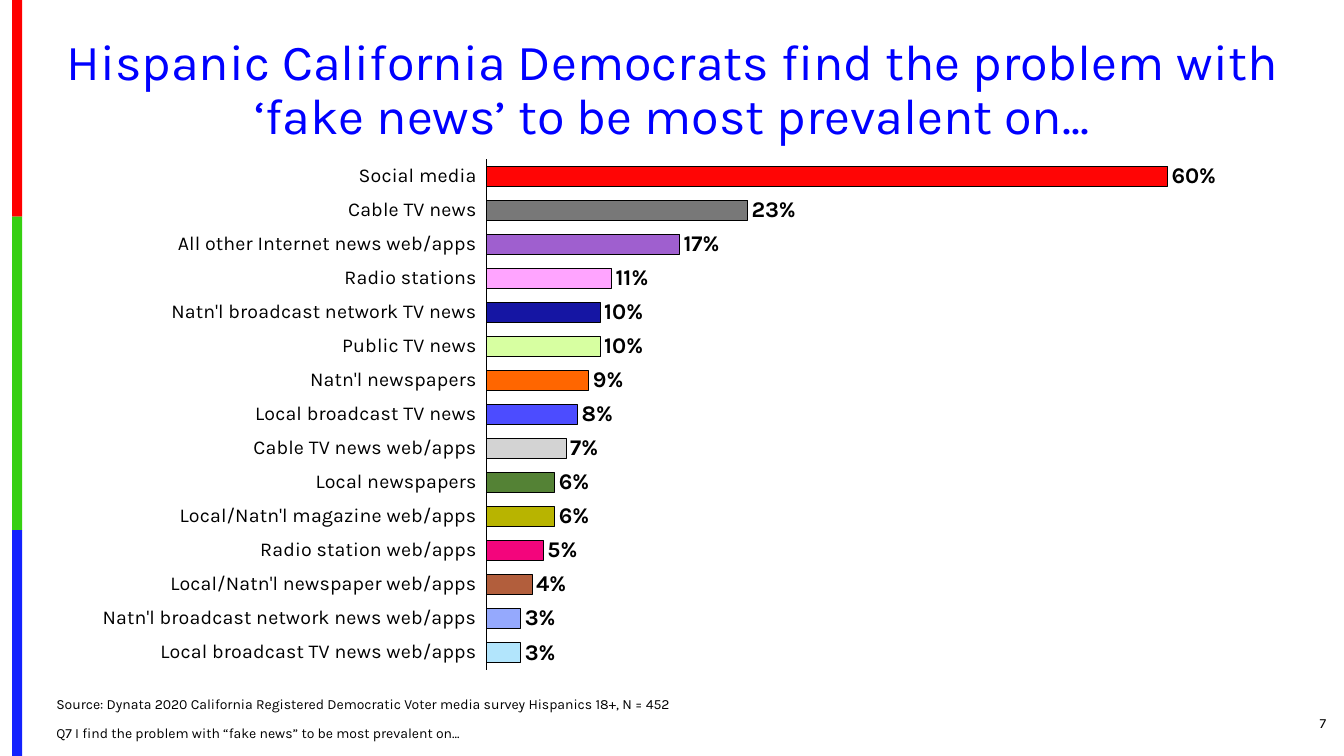
from typing import NamedTuple

from lxml.etree import SubElement
from pptx import Presentation
from pptx.chart.data import CategoryChartData
from pptx.dml.color import RGBColor
from pptx.enum.chart import XL_CHART_TYPE, XL_LABEL_POSITION, XL_TICK_LABEL_POSITION, XL_TICK_MARK
from pptx.enum.shapes import MSO_SHAPE
from pptx.enum.text import MSO_ANCHOR, PP_ALIGN
from pptx.oxml.ns import qn
from pptx.util import Inches, Pt

FONT = "Karla"
BLACK = "000000"


class Strip(NamedTuple):
    height: float
    color: str


class Bar(NamedTuple):
    label: str
    value: float
    color: str


class Note(NamedTuple):
    box: tuple[float, float, float, float]
    lines: list[str]
    align: PP_ALIGN
    anchor: MSO_ANCHOR
    gap: float = 0


STRIPS = [Strip(2.15, "FE0000"), Strip(3.11, "36CF12"), Strip(2.24, "1322FE")]

# Bars from top to bottom
BARS = [
    Bar("Social media", 0.60, "FF0505"),
    Bar("Cable TV news", 0.23, "787878"),
    Bar("All other Internet news web/apps", 0.17, "9F5FCF"),
    Bar("Radio stations", 0.11, "FFA4FF"),
    Bar("Natn'l broadcast network TV news", 0.10, "1515A3"),
    Bar("Public TV news", 0.10, "D7FFA1"),
    Bar("Natn'l newspapers", 0.09, "FF6600"),
    Bar("Local broadcast TV news", 0.08, "4C4CFF"),
    Bar("Cable TV news web/apps", 0.07, "D3D3D3"),
    Bar("Local newspapers", 0.06, "548235"),
    Bar("Local/Natn'l magazine web/apps", 0.06, "B8B400"),
    Bar("Radio station web/apps", 0.05, "F3057C"),
    Bar("Local/Natn'l newspaper web/apps", 0.04, "B25E3C"),
    Bar("Natn'l broadcast network news web/apps", 0.03, "95A9FD"),
    Bar("Local broadcast TV news web/apps", 0.03, "B2E5FC"),
]

NOTES = [
    Note((12.17, 6.98, 1.08, 0.4), ["7"], PP_ALIGN.RIGHT, MSO_ANCHOR.MIDDLE),
    Note(
        (0.46, 6.87, 9.45, 0.54),
        [
            "Source: Dynata 2020 California Registered Democratic Voter media survey Hispanics 18+, N = 452",
            "Q7 I find the problem with “fake news” to be most prevalent on...",
        ],
        PP_ALIGN.LEFT, MSO_ANCHOR.BOTTOM, 10,
    ),
]


def paint(target, color: str) -> None:
    """Give a fill a solid colour."""
    target.solid()
    target.fore_color.rgb = RGBColor.from_string(color)


def style(font, size: float, color: str = BLACK, bold: bool = False) -> None:
    font.name = FONT
    font.size = Pt(size)
    font.bold = bold
    font.color.rgb = RGBColor.from_string(color)


def outline(line) -> None:
    paint(line.fill, BLACK)
    line.width = Pt(0.75)


def draw_strips(slide) -> None:
    top = 0.0
    for strip in STRIPS:
        shape = slide.shapes.add_shape(
            MSO_SHAPE.RECTANGLE, Inches(0.12), Inches(top), Inches(0.1), Inches(strip.height))
        shape.shadow.inherit = False
        paint(shape.fill, strip.color)
        shape.line.fill.background()
        top += strip.height


def draw_title(slide) -> None:
    title = slide.shapes.title
    title.left, title.top = Inches(0.46), Inches(0.31)
    title.width, title.height = Inches(12.42), Inches(1.19)
    frame = title.text_frame
    frame.text = ("Hispanic California Democrats find the problem with "
                  "‘fake news’ to be most prevalent on...")
    frame.word_wrap = True
    frame.vertical_anchor = MSO_ANCHOR.MIDDLE
    para = frame.paragraphs[0]
    para.alignment = PP_ALIGN.CENTER
    para.line_spacing = 0.9
    style(para.runs[0].font, 36, "0000FF")


def place_plot(chart) -> None:
    """Fix the inner plot area as shares of the chart."""
    area = chart.plots[0]._element.getparent()
    layout = area.find(qn("c:layout"))
    if layout is None:
        layout = SubElement(area, qn("c:layout"))
        area.insert(0, layout)
    manual = SubElement(layout, qn("c:manualLayout"))
    for tag, value in [("layoutTarget", "inner"), ("xMode", "edge"), ("yMode", "edge"),
                       ("x", "0.352"), ("y", "0.028"), ("w", "0.635"), ("h", "0.943")]:
        SubElement(manual, qn(f"c:{tag}")).set("val", value)


def draw_chart(slide) -> None:
    bars = BARS[::-1]
    data = CategoryChartData(number_format="0%")
    data.categories = [bar.label for bar in bars]
    data.add_series("Series 1", [bar.value for bar in bars])
    chart = slide.shapes.add_chart(
        XL_CHART_TYPE.BAR_CLUSTERED, Inches(0.46), Inches(1.43),
        Inches(12.41), Inches(5.37), data).chart
    chart.has_legend = False
    chart.has_title = False
    style(chart.font, 10)
    place_plot(chart)

    # Axes
    cats = chart.category_axis
    cats.major_tick_mark = cats.minor_tick_mark = XL_TICK_MARK.NONE
    cats.tick_label_position = XL_TICK_LABEL_POSITION.LOW
    cats.has_major_gridlines = False
    style(cats.tick_labels.font, 14)
    outline(cats.format.line)
    vals = chart.value_axis
    vals.minimum_scale, vals.maximum_scale = 0, 0.7
    vals.has_major_gridlines = False
    vals.visible = False

    # Bars and their labels
    plot = chart.plots[0]
    plot.gap_width = 72
    plot.vary_by_categories = False
    series = plot.series[0]
    series.invert_if_negative = False
    paint(series.format.fill, "3333FF")
    outline(series.format.line)
    for index, bar in enumerate(bars):
        look = series.points[index].format
        paint(look.fill, bar.color)
        outline(look.line)
    labels = series.data_labels
    labels.show_value = True
    labels.number_format = "0%"
    labels.number_format_is_linked = False
    labels.position = XL_LABEL_POSITION.OUTSIDE_END
    style(labels.font, 16, bold=True)


def draw_note(slide, note: Note) -> None:
    frame = slide.shapes.add_textbox(*map(Inches, note.box)).text_frame
    frame.word_wrap = True
    frame.vertical_anchor = note.anchor
    frame.text = "\n".join(note.lines)
    for index, para in enumerate(frame.paragraphs):
        para.alignment = note.align
        para.line_spacing = 0.9
        para.space_before = Pt(note.gap if index else 0)
        style(para.runs[0].font, 10)


def main() -> None:
    deck = Presentation()
    deck.slide_width, deck.slide_height = Inches(13.33), Inches(7.5)
    slide = deck.slides.add_slide(deck.slide_layouts[5])
    paint(slide.background.fill, "FFFFFF")
    draw_strips(slide)
    draw_title(slide)
    draw_chart(slide)
    for note in NOTES:
        draw_note(slide, note)
    deck.save("out.pptx")


if __name__ == "__main__":
    main()
